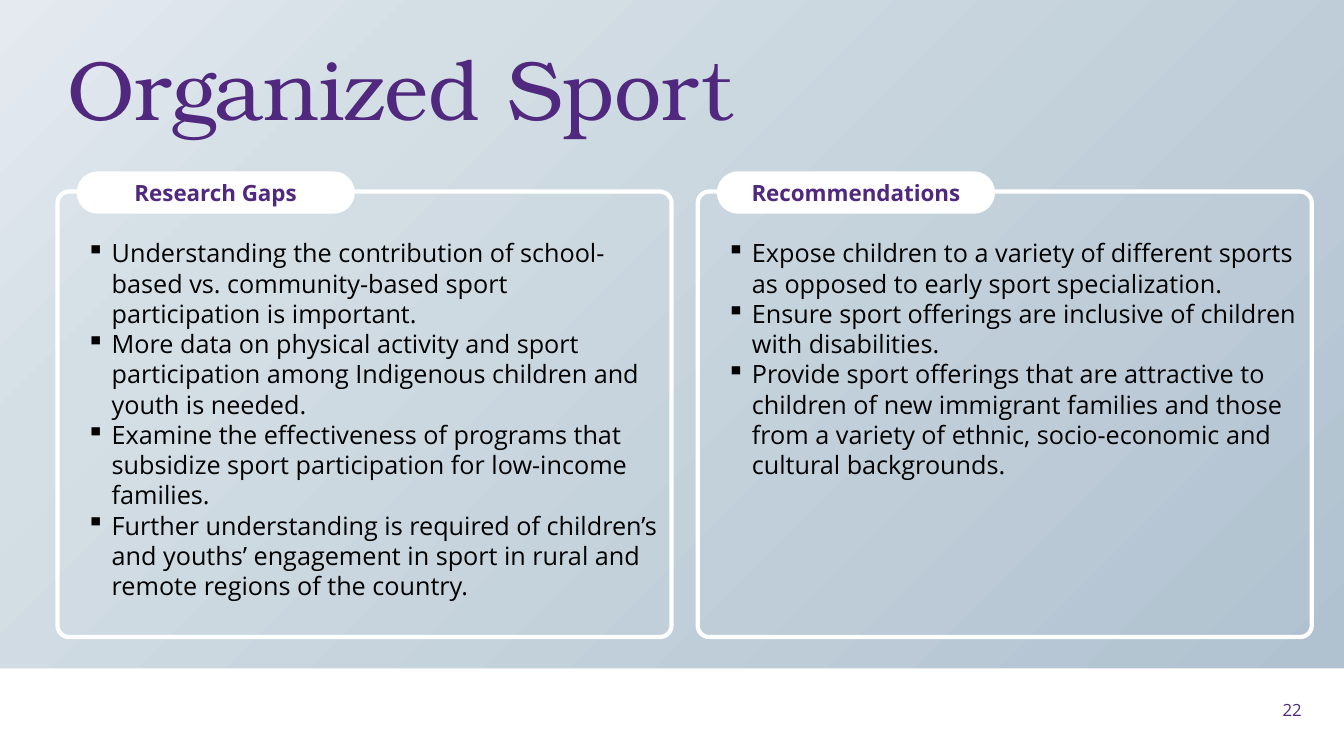
"""Build the Organized Sport slide with two labelled panels."""
import lxml.etree
import pptx
import pptx.dml.color
import pptx.enum.shapes
import pptx.enum.text
import pptx.oxml.ns
import pptx.util

WIDTH, HEIGHT = 13.33, 7.5
BAND_HEIGHT = 6.63
PANEL_LEFT, PANEL_STEP = 0.57, 6.35
PURPLE, BLACK, WHITE = "50287D", "000000", "FFFFFF"
BODY_FONT, TITLE_FONT = "Open Sans", "TeX Gyre Bonum"
BACKDROP_STOPS = [(0, "E5EAF1"), (23, "D4DFE5"), (100, "B0C1D0")]
SHAPES = pptx.enum.shapes.MSO_SHAPE
ALIGN = pptx.enum.text.PP_ALIGN
ANCHOR = pptx.enum.text.MSO_ANCHOR

PANELS = [
    ("Research Gaps", [
        "Understanding the contribution of school-based vs. community-based sport participation is important.",
        "More data on physical activity and sport participation among Indigenous children and youth is needed.",
        "Examine the effectiveness of programs that subsidize sport participation for low-income families.",
        "Further understanding is required of children’s and youths’ engagement in sport in rural and remote regions of the country.",
    ]),
    ("Recommendations", [
        "Expose children to a variety of different sports as opposed to early sport specialization.",
        "Ensure sport offerings are inclusive of children with disabilities.",
        "Provide sport offerings that are attractive to children of new immigrant families and those from a variety of ethnic, socio-economic and cultural backgrounds.",
    ]),
]


def color(value):
    """Turn a hex string into a colour."""
    return pptx.dml.color.RGBColor.from_string(value)


def inches(*lengths):
    """Convert lengths in inches to slide units."""
    return [pptx.util.Inches(length) for length in lengths]


def add_child(parent, tag, **attributes):
    """Append a DrawingML element."""
    name = pptx.oxml.ns.qn(f"a:{tag}")
    return lxml.etree.SubElement(parent, name, attributes)


def add_box(slide, kind, box, fill=None, line=None, corner=None):
    """Add a preset shape with an optional fill, outline and corner radius."""
    shape = slide.shapes.add_shape(kind, *inches(*box))
    shape.shadow.inherit = False
    if fill:
        shape.fill.solid()
        shape.fill.fore_color.rgb = color(fill)
    else:
        shape.fill.background()
    if line:
        shape.line.color.rgb = color(line)
        shape.line.width = pptx.util.Pt(3)
    else:
        shape.line.fill.background()
    if corner is not None:
        shape.adjustments[0] = corner
    return shape


def add_backdrop(slide):
    """Add the diagonal gradient band."""
    shape = add_box(slide, SHAPES.RECTANGLE, (0, 0, WIDTH, BAND_HEIGHT))
    shape.fill.gradient()
    shape.fill.gradient_angle = 315
    stops = shape.fill._fill._gradFill.find(pptx.oxml.ns.qn("a:gsLst"))
    for stop in list(stops):
        stops.remove(stop)
    for position, value in BACKDROP_STOPS:
        stop = add_child(stops, "gs", pos=str(position * 1000))
        add_child(stop, "srgbClr", val=value)


def write(shape, lines, size, value, font=BODY_FONT, bold=False, align=ALIGN.LEFT,
          anchor=ANCHOR.MIDDLE, spacing=None, bullet=None):
    """Fill a shape with formatted paragraphs."""
    frame = shape.text_frame
    frame.word_wrap = True
    frame.vertical_anchor = anchor
    frame.text = "\n".join(lines)
    for paragraph in frame.paragraphs:
        paragraph.alignment = align
        if spacing:
            paragraph.line_spacing = pptx.util.Pt(spacing)
        if bullet:
            properties = paragraph._p.get_or_add_pPr()
            indent = pptx.util.Inches(0.25)
            properties.set("marL", str(indent))
            properties.set("indent", str(-indent))
            add_child(properties, "buChar", char=bullet)
        for run in paragraph.runs:
            run.font.name = font
            run.font.size = pptx.util.Pt(size)
            run.font.bold = bold
            run.font.color.rgb = color(value)


def add_text(slide, box, lines, size, value, **style):
    """Add a text box."""
    write(slide.shapes.add_textbox(*inches(*box)), lines, size, value, **style)


def add_panel(slide, left, heading, points):
    """Add an outlined panel with a pill heading and bullets."""
    inner = left + 0.19
    add_box(slide, SHAPES.ROUNDED_RECTANGLE, (left, 1.9, 6.09, 4.42),
            line=WHITE, corner=0.026)
    add_text(slide, (inner, 2.31, 5.86, 2.96), points, 18, BLACK,
             anchor=ANCHOR.TOP, spacing=21.6, bullet="▪")
    pill = add_box(slide, SHAPES.ROUNDED_RECTANGLE, (inner, 1.7, 2.76, 0.42),
                   fill=WHITE, corner=0.5)
    write(pill, [heading], 16, PURPLE, bold=True, align=ALIGN.CENTER)


def main():
    """Build and save the slide."""
    presentation = pptx.Presentation()
    presentation.slide_width, presentation.slide_height = inches(WIDTH, HEIGHT)
    slide = presentation.slides.add_slide(presentation.slide_layouts[6])
    add_backdrop(slide)
    add_box(slide, SHAPES.RECTANGLE,
            (0, BAND_HEIGHT, WIDTH, HEIGHT - BAND_HEIGHT), fill=WHITE)
    add_text(slide, (PANEL_LEFT, 0.26, 11.5, 1.45), ["Organized Sport"], 60, PURPLE,
             font=TITLE_FONT, spacing=55)
    for column, (heading, points) in enumerate(PANELS):
        add_panel(slide, PANEL_LEFT + column * PANEL_STEP, heading, points)
    add_text(slide, (12.54, 6.84, 0.47, 0.4), ["22"], 12, PURPLE, align=ALIGN.RIGHT)
    presentation.save("out.pptx")


if __name__ == "__main__":
    main()
